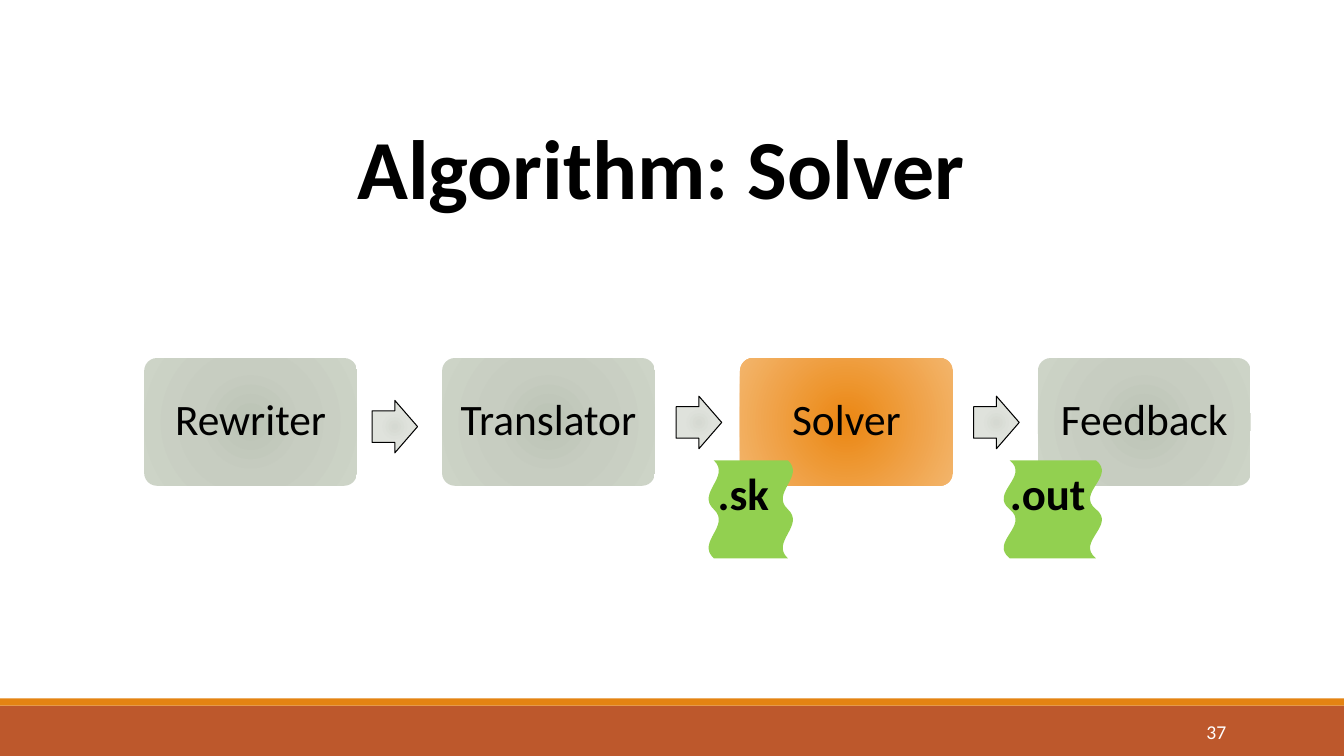
from pptx import Presentation
from pptx.dml.color import RGBColor as Rgb
from pptx.enum.shapes import MSO_SHAPE as Kind
from pptx.enum.text import MSO_ANCHOR as Anchor, MSO_AUTO_SIZE as Fit, PP_ALIGN as Align
from pptx.oxml import parse_xml
from pptx.oxml.ns import nsdecls
from pptx.util import Pt

HUES = {
    "ink": "000000", "white": "FFFFFF", "rust": "BD582C",
    "gold": "E48312", "lime": "92D050",
}
SAGE = [(0, "BBC3B5"), (45, "C7CDC1"), (100, "CDD4C7")]
AMBER = [(0, "EB8713"), (100, "F3B56C")]
MIST = [(0, "D5D9D2"), (45, "DFE2DC"), (100, "E3E6E0")]


def write(frame, text, size=32, hue="ink", bold=False, align=Align.LEFT,
          anchor=Anchor.TOP, wrap=True, lead=None):
    frame.auto_size = Fit.NONE
    frame.word_wrap = wrap
    frame.vertical_anchor = anchor
    para = frame.paragraphs[0]
    para.alignment = align
    para.line_spacing = lead
    run = para.add_run()
    run.text = text
    font = run.font
    font.name, font.size, font.bold = "Calibri", Pt(size), bold
    font.color.rgb = Rgb.from_string(HUES[hue])


class Deck:
    def __init__(self):
        self.show = Presentation()
        self.show.slide_width, self.show.slide_height = Pt(960), Pt(540)
        self.slide = self.show.slides.add_slide(self.show.slide_layouts[5])
        self.shapes = self.slide.shapes

    def title(self, text, *area):
        head = self.shapes.title
        head.left, head.top, head.width, head.height = map(Pt, area)
        write(head.text_frame, text, size=60, bold=True,
              align=Align.CENTER, anchor=Anchor.MIDDLE)

    def shape(self, kind, *area, hue=None, glow=None, line=None):
        item = self.shapes.add_shape(kind, *map(Pt, area))
        item.shadow.inherit = False
        if glow:
            self.glow(item, glow)
        else:
            item.fill.solid()
            item.fill.fore_color.rgb = Rgb.from_string(HUES[hue])
        if line:
            item.line.color.rgb = Rgb.from_string(HUES[line])
            item.line.width = Pt(0.75)
        else:
            item.line.fill.background()
        return item

    def glow(self, item, stops):
        """Fill with a circular gradient from the centre outwards."""
        item.fill.gradient()
        old = item.element.spPr.find(
            "{http://schemas.openxmlformats.org/drawingml/2006/main}gradFill")
        marks = "".join(f'<a:gs pos="{pos * 1000}"><a:srgbClr val="{hue}"/></a:gs>'
                        for pos, hue in stops)
        new = parse_xml(
            f'<a:gradFill {nsdecls("a")} rotWithShape="1"><a:gsLst>{marks}</a:gsLst>'
            '<a:path path="circle"><a:fillToRect l="50000" t="50000" r="50000" '
            'b="50000"/></a:path></a:gradFill>')
        old.getparent().replace(old, new)

    def step(self, text, *area, glow):
        box = self.shape(Kind.ROUNDED_RECTANGLE, *area, glow=glow)
        box.adjustments[0] = 0.1
        write(box.text_frame, text, size=31, align=Align.CENTER,
              anchor=Anchor.MIDDLE, wrap=False, lead=0.9)

    def arrow(self, *area):
        item = self.shape(Kind.RIGHT_ARROW, *area, glow=MIST, line="ink")
        item.adjustments[0] = 0.6

    def wave(self, *area):
        self.shape(Kind.DOUBLE_WAVE, *area, hue="lime").rotation = 90

    def label(self, text, *area, **style):
        box = self.shapes.add_textbox(*map(Pt, area))
        write(box.text_frame, text, **style)


def main():
    deck = Deck()

    # Footer bands and page number
    deck.shape(Kind.RECTANGLE, 0, 504, 960, 36, hue="rust")
    deck.shape(Kind.RECTANGLE, 0, 498.75, 960, 5.25, hue="gold")
    deck.label("37", 779.5, 508.5, 103.5, 28.75, size=14, hue="white",
               align=Align.RIGHT, anchor=Anchor.MIDDLE)

    deck.title("Algorithm: Solver", 41, 78.5, 862.5, 80)

    # Pipeline steps
    for i, name in enumerate(["Rewriter", "Translator", "Solver", "Feedback"]):
        deck.step(name, 103 + 212.8 * i, 255.75, 152, 91.25,
                  glow=AMBER if name == "Solver" else SAGE)

    # Arrows between the steps
    for left, top in [(265.75, 286), (483, 283), (695.5, 283)]:
        deck.arrow(left, top, 32.5, 37.5)

    # Files passed on
    for text, left, top, tall, start, width in [
            (".sk", 501.25, 333.5, 60.5, 505.5, 60.5),
            (".out", 717, 328.5, 70.5, 714.25, 80.75)]:
        deck.wave(left, top, 70, tall)
        deck.label(text, start, 329, width, 46, bold=True, wrap=False)

    deck.show.save("out.pptx")


if __name__ == "__main__":
    main()
